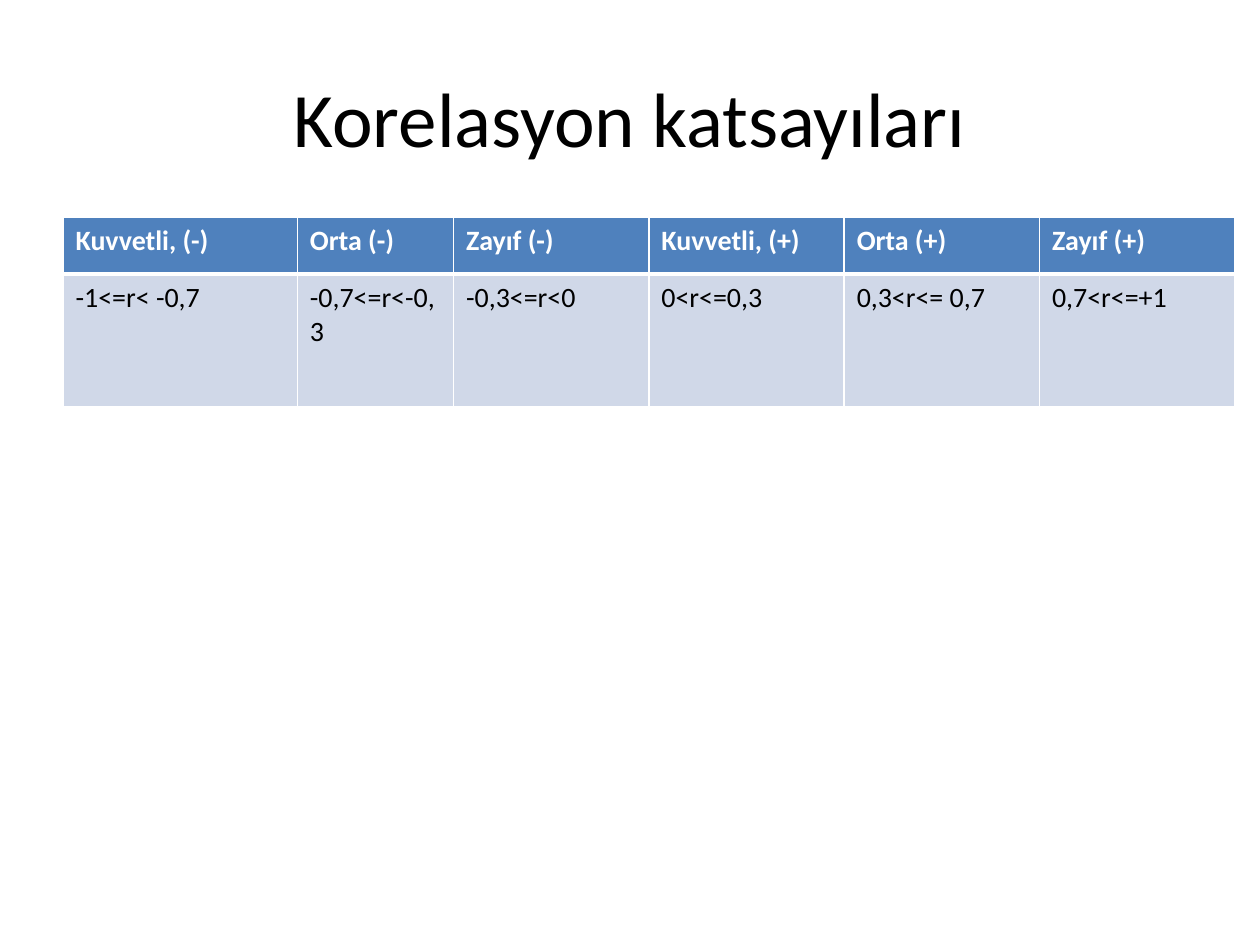
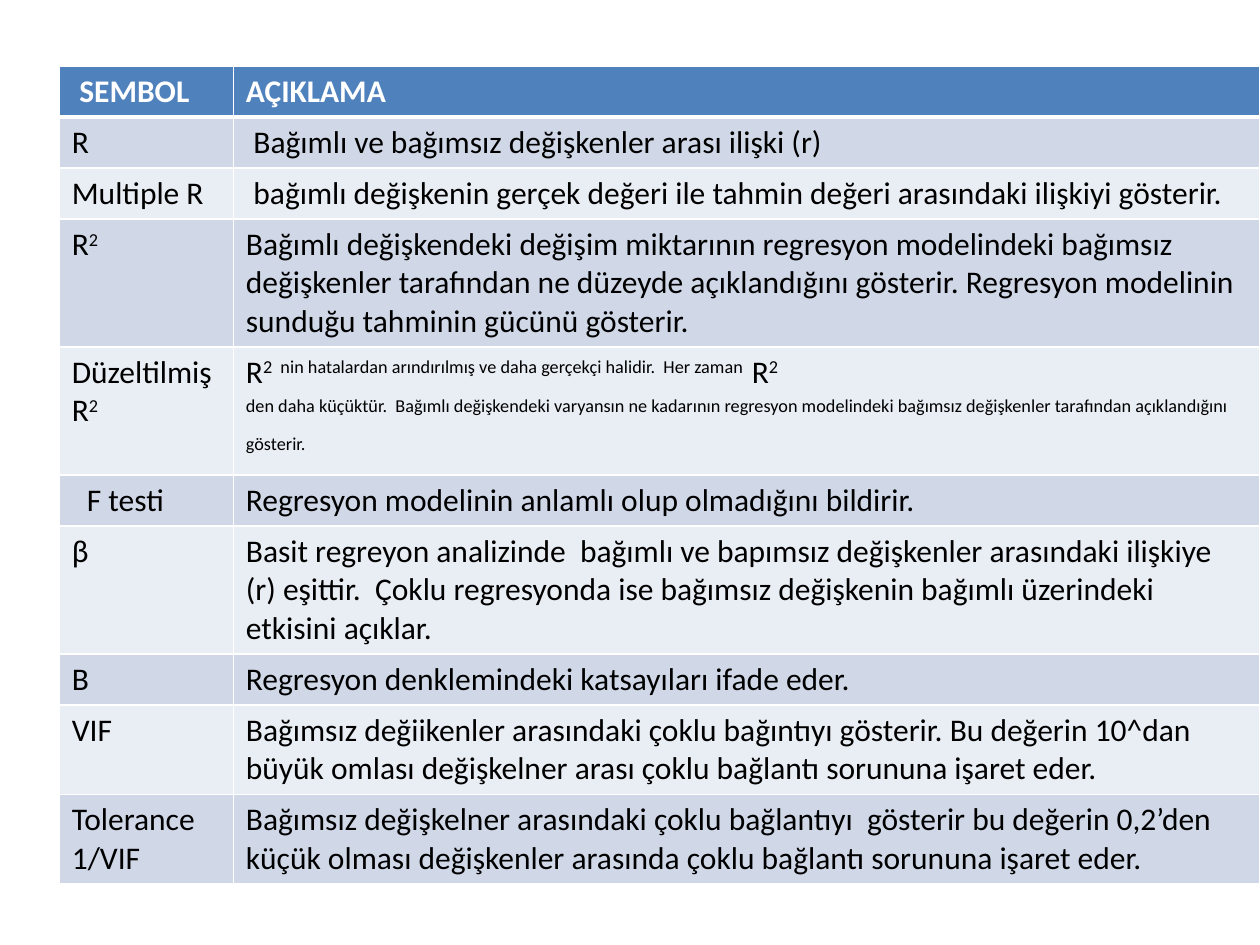
from dataclasses import dataclass

from lxml.etree import SubElement as Sub
from pptx import Presentation as Deck
from pptx.dml.color import RGBColor as Rgb
from pptx.enum.text import MSO_ANCHOR as Anchor, PP_ALIGN as Align
from pptx.oxml.ns import qn
from pptx.util import Inches, Pt

WIDE, HIGH = Inches(10), Inches(7.5)
WHITE, BLACK, BLUE = "FFFFFF", "000000", "4F81BD"
BANDS = ("D0D8E8", "E9EDF4")
EDGES = {"lnL": 1, "lnR": 1, "lnT": 1, "lnB": 1}
HEAD = EDGES | {"lnB": 3}
PAD = Inches(0.1)
SPACE = Inches(0.06)


@dataclass(frozen=True)
class Line:
    cells: tuple
    high: float
    dents: tuple = ()


@dataclass(frozen=True)
class Grid:
    left: float
    top: float
    wide: float
    shares: tuple
    size: int
    lines: tuple


def tint(code: str) -> Rgb:
    return Rgb.from_string(code)


def rows(count: int) -> float:
    return (0.1 + 0.305 * count) / 7.5


def write(para, text: str, size: int, color: str, bold: bool = False) -> None:
    form = {"name": "Calibri", "size": Pt(size), "bold": bold}
    for turn, piece in enumerate(text.split("|")):
        if not piece:
            continue
        run = para.add_run()
        run.text = piece
        for name, value in form.items():
            setattr(run.font, name, value)
        run.font.color.rgb = tint(color)
        if turn % 2:
            run.font._element.set("baseline", "30000")


def border(cell, edges: dict) -> None:
    props = cell._tc.get_or_add_tcPr()
    for spot, (tag, width) in enumerate(edges.items()):
        line = Sub(props, qn(f"a:{tag}"), w=str(int(Pt(width))))
        fill = Sub(line, qn("a:solidFill"))
        Sub(fill, qn("a:srgbClr"), val=WHITE)
        props.insert(spot, line)


def title(slide, text: str) -> None:
    box = slide.shapes.add_textbox(
        int(WIDE * 0.05), int(HIGH * 0.04), int(WIDE * 0.9), int(HIGH / 6))
    frame = box.text_frame
    form = {"word_wrap": True, "vertical_anchor": Anchor.MIDDLE}
    for name, value in form.items():
        setattr(frame, name, value)
    para = frame.paragraphs[0]
    para.alignment = Align.CENTER
    write(para, text, 44, BLACK)


def draw(slide, grid: Grid) -> None:
    total = sum(line.high for line in grid.lines)
    table = slide.shapes.add_table(
        len(grid.lines), len(grid.shares),
        int(WIDE * grid.left), int(HIGH * grid.top),
        int(WIDE * grid.wide), int(HIGH * total)).table
    table.horz_banding = False
    for col, share in zip(table.columns, grid.shares):
        col.width = int(WIDE * grid.wide * share / sum(grid.shares))
    for y, line in enumerate(grid.lines):
        table.rows[y].height = int(HIGH * line.high)
        top = y == 0
        for x, text in enumerate(line.cells):
            cell = table.cell(y, x)
            cell.fill.solid()
            cell.fill.fore_color.rgb = tint(BLUE if top else BANDS[(y - 1) % 2])
            border(cell, HEAD if top else EDGES)
            if line.dents:
                cell.margin_left = PAD + SPACE * line.dents[x]
            frame = cell.text_frame
            for order, piece in enumerate(text.split("\n")):
                para = frame.add_paragraph() if order else frame.paragraphs[0]
                write(para, piece, grid.size, WHITE if top else BLACK, top)


RANGES = Grid(0.05, 0.23, 0.93, (6, 4, 5, 5, 5, 5), 16, (
    Line(("Kuvvetli, (-)", "Orta (-)", "Zayıf (-)",
          "Kuvvetli, (+)", "Orta (+)", "Zayıf (+)"), 0.06),
    Line(("-1<=r< -0,7", "-0,7<=r<-0,3", "-0,3<=r<0",
          "0<r<=0,3", "0,3<r<= 0,7", "0,7<r<=+1"), 0.14),
))

TERMS = Grid(0.047, 0.07, 0.953, (14.5, 85.5), 18, (
    Line(("SEMBOL", "AÇIKLAMA"), rows(1), (1, 0)),
    Line(("R", "Bağımlı ve bağımsız değişkenler arası ilişki (r)"),
         rows(1), (0, 1)),
    Line(("Multiple R", "bağımlı değişkenin gerçek değeri ile tahmin değeri "
          "arasındaki ilişkiyi gösterir."), rows(1), (0, 1)),
    Line(("R|2", "Bağımlı değişkendeki değişim miktarının regresyon "
          "modelindeki bağımsız değişkenler tarafından ne düzeyde "
          "açıklandığını gösterir. Regresyon modelinin sunduğu tahminin "
          "gücünü gösterir."), rows(3)),
    Line(("Düzeltilmiş R|2", "R|2  nin hatalardan arındırılmış ve daha "
          "gerçekçi halidir.  Her zaman  |R|2\n"
          "|den daha küçüktür.  Bağımlı değişkendeki varyansın ne kadarının "
          "regresyon modelindeki bağımsız değişkenler tarafından "
          "açıklandığını gösterir."), rows(3)),
    Line(("F testi", "Regresyon modelinin anlamlı olup olmadığını bildirir."),
         rows(1), (2, 0)),
    Line(("β", "Basit regreyon analizinde  bağımlı ve bapımsız değişkenler "
          "arasındaki ilişkiye (r) eşittir.  Çoklu regresyonda ise bağımsız "
          "değişkenin bağımlı üzerindeki etkisini açıklar."), rows(3)),
    Line(("B", "Regresyon denklemindeki katsayıları ifade eder."), rows(1)),
    Line(("VIF", "Bağımsız değiikenler arasındaki çoklu bağıntıyı gösterir. "
          "Bu değerin 10^dan büyük omlası değişkelner arası çoklu bağlantı "
          "sorununa işaret eder."), rows(2)),
    Line(("Tolerance\n1/VIF", "Bağımsız değişkelner arasındaki çoklu "
          "bağlantıyı  gösterir bu değerin 0,2’den küçük olması değişkenler "
          "arasında çoklu bağlantı sorununa işaret eder."), rows(2)),
))


def main() -> None:
    deck = Deck()
    deck.slide_width, deck.slide_height = WIDE, HIGH
    blank = deck.slide_layouts[6]
    first = deck.slides.add_slide(blank)
    title(first, "Korelasyon katsayıları")
    draw(first, RANGES)
    draw(deck.slides.add_slide(blank), TERMS)
    deck.save("out.pptx")


if __name__ == "__main__":
    main()
